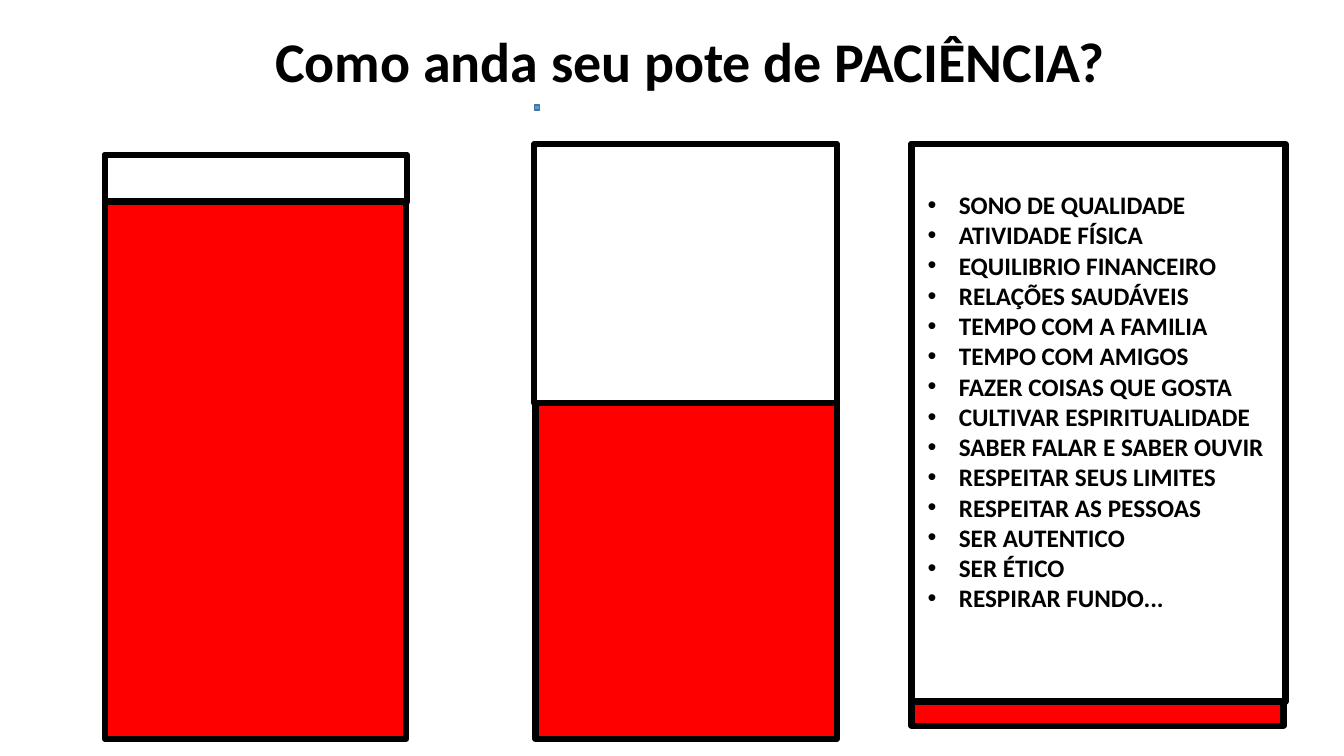
from lxml import etree
from pptx import Presentation
from pptx.dml.color import RGBColor
from pptx.enum.shapes import MSO_SHAPE
from pptx.enum.text import MSO_ANCHOR, MSO_AUTO_SIZE, PP_ALIGN
from pptx.oxml.ns import qn
from pptx.util import Inches, Pt

RECTANGLE = MSO_SHAPE.RECTANGLE
TOP = MSO_ANCHOR.TOP
NO_AUTOFIT = MSO_AUTO_SIZE.NONE
LEFT = PP_ALIGN.LEFT

FONT = "Calibri"
BLACK, WHITE, RED = "000000", "FFFFFF", "FF0000"
TITLE_AND_CONTENT = 1

# Each pot: red body and white empty part, as left, top, width, height
POTS = [
    ((1.04, 1.54, 2.99, 5.79), (1.04, 1.54, 3, 0.46)),
    ((5.31, 1.54, 2.99, 5.79), (5.3, 1.43, 3, 2.57)),
    ((9.04, 1.43, 3.69, 5.77), (9.04, 1.43, 3.71, 5.53)),
]

HABITS = [
    "SONO DE QUALIDADE",
    "ATIVIDADE FÍSICA",
    "EQUILIBRIO FINANCEIRO",
    "RELAÇÕES SAUDÁVEIS",
    "TEMPO COM A FAMILIA",
    "TEMPO COM AMIGOS",
    "FAZER COISAS QUE GOSTA",
    "CULTIVAR ESPIRITUALIDADE",
    "SABER FALAR E SABER OUVIR",
    "RESPEITAR SEUS LIMITES",
    "RESPEITAR AS PESSOAS",
    "SER AUTENTICO",
    "SER ÉTICO",
    "RESPIRAR FUNDO...",
]


def color(hex_value):
    return RGBColor.from_string(hex_value)


def add_rectangle(slide, area, fill, line=BLACK, line_width=4.5):
    box = slide.shapes.add_shape(RECTANGLE, *map(Inches, area))
    box.shadow.inherit = False
    box.fill.solid()
    box.fill.fore_color.rgb = color(fill)
    box.line.color.rgb = color(line)
    box.line.width = Pt(line_width)


def place(placeholder, area):
    """Position a placeholder in front of the shapes drawn so far."""
    placeholder.left, placeholder.top, placeholder.width, placeholder.height = map(
        Inches, area)
    element = placeholder.element
    element.getparent().append(element)
    frame = placeholder.text_frame
    frame.word_wrap = True
    frame.auto_size = NO_AUTOFIT
    frame.vertical_anchor = TOP
    return frame


def add_bullet(para, indent):
    properties = para._p.get_or_add_pPr()
    properties.set("marL", str(Inches(indent)))
    properties.set("indent", str(-Inches(indent)))
    etree.SubElement(properties, qn("a:buFont")).set("typeface", "Arial")
    etree.SubElement(properties, qn("a:buChar")).set("char", "•")


def write(para, text, size, bullet_indent=None):
    para.alignment = LEFT
    para.line_spacing = 1.0
    para.space_before = Pt(0)
    if bullet_indent:
        add_bullet(para, bullet_indent)
    span = para.add_run()
    span.text = text
    span.font.name = FONT
    span.font.size = Pt(size)
    span.font.bold = True
    span.font.color.rgb = color(BLACK)


def main():
    deck = Presentation()
    deck.slide_width, deck.slide_height = Inches(13.33), Inches(7.5)
    slide = deck.slides.add_slide(deck.slide_layouts[TITLE_AND_CONTENT])

    # Pots and the small blue square above the middle one
    for body, empty_part in POTS:
        add_rectangle(slide, body, RED)
        add_rectangle(slide, empty_part, WHITE)
    add_rectangle(slide, (5.3, 1.04, 0.05, 0.05), "5B9BD5", "43739E", 1)

    # Title
    title = place(slide.shapes.title, (2.63, 0.21, 8.99, 0.77))
    write(title.paragraphs[0], "Como anda seu pote de PACIÊNCIA?", size=40)

    # Habits listed inside the third pot
    habits = place(slide.placeholders[1], (9.1, 1.83, 3.65, 4.34))
    for index, habit in enumerate(HABITS):
        para = habits.add_paragraph() if index else habits.paragraphs[0]
        write(para, habit, size=18, bullet_indent=0.31)

    deck.save("out.pptx")


if __name__ == "__main__":
    main()
